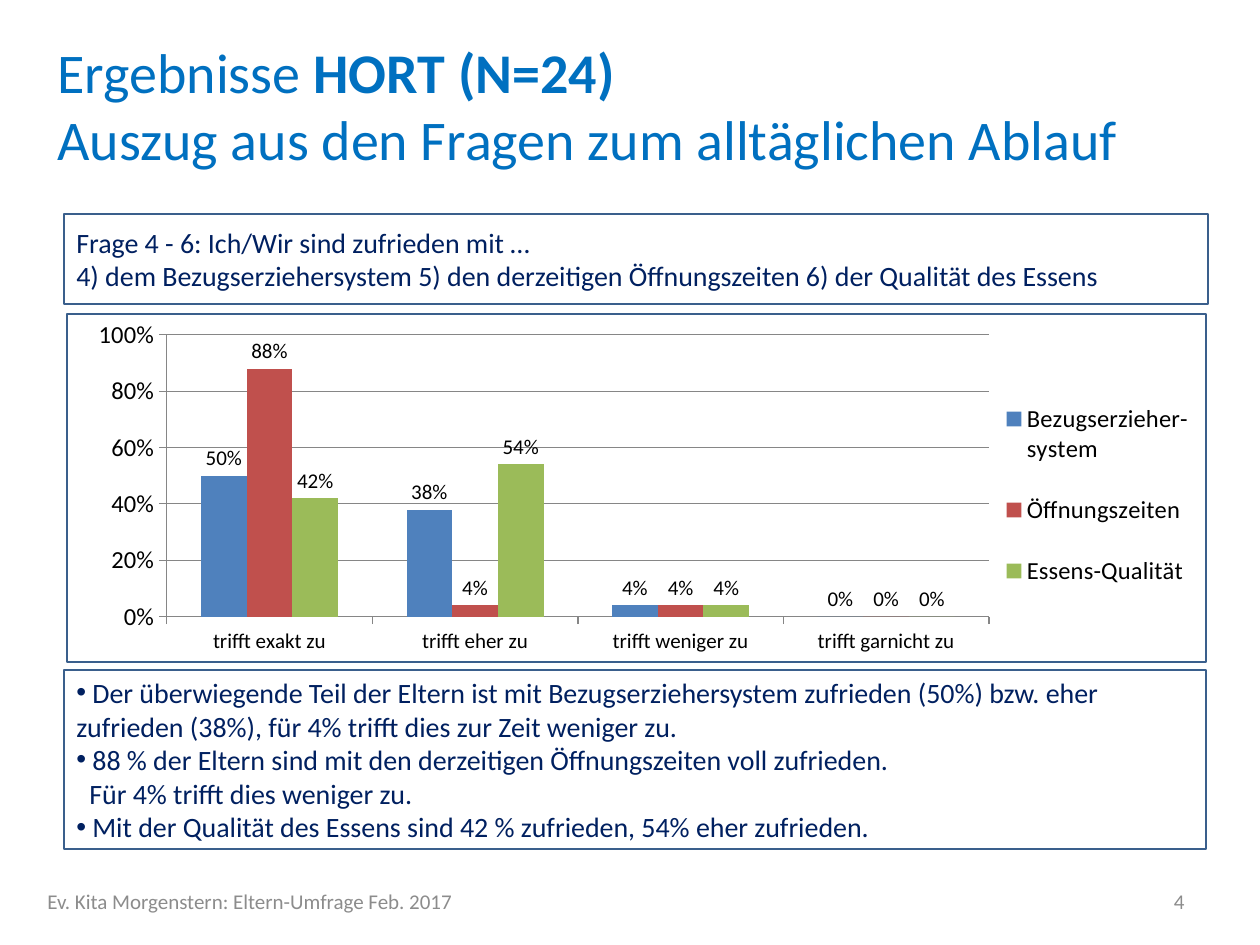
from typing import NamedTuple

from lxml.etree import SubElement
from pptx import Presentation
from pptx.chart.data import CategoryChartData
from pptx.dml.color import RGBColor
from pptx.enum.chart import XL_CHART_TYPE as ChartType
from pptx.enum.chart import XL_LABEL_POSITION as LabelPosition
from pptx.enum.chart import XL_LEGEND_POSITION as LegendPosition
from pptx.enum.chart import XL_TICK_MARK as TickMark
from pptx.enum.shapes import MSO_SHAPE as Shape
from pptx.enum.text import MSO_ANCHOR as Anchor
from pptx.enum.text import PP_ALIGN as Align
from pptx.oxml import parse_xml
from pptx.oxml.ns import nsdecls, qn
from pptx.util import Emu, Pt

SCALE = 914400 / 126  # EMU per px
FONT = "Calibri"
COLORS = {
    "title": "0070C0",
    "body": "002060",
    "footer": "8C8C8C",
    "frame": "3A5F8C",
    "axis": "868686",
    "black": "000000",
}


class Box(NamedTuple):
    left: int
    top: int
    width: int
    height: int


class Line(NamedTuple):
    """One paragraph: (text, bold) runs, with an optional bullet and indent."""
    runs: list[tuple[str, bool]]
    bullet: bool = False
    indent: int = 0


class Answer(NamedTuple):
    name: str
    shares: list[float]
    color: str


def px(length: int) -> Emu:
    return Emu(round(length * SCALE))


def rgb(name: str) -> RGBColor:
    return RGBColor.from_string(COLORS[name])


def plain(text: str, **options) -> Line:
    return Line([(text, False)], **options)


def write(shape, lines: list[Line], *, size: int, color: str, align=Align.LEFT) -> None:
    frame = shape.text_frame
    frame.word_wrap = True
    frame.vertical_anchor = Anchor.MIDDLE
    for number, line in enumerate(lines):
        paragraph = frame.add_paragraph() if number else frame.paragraphs[0]
        paragraph.alignment = align
        properties = paragraph._p.get_or_add_pPr()
        if line.indent:
            properties.set("marL", str(px(line.indent)))
        if line.bullet:
            SubElement(properties, qn("a:buFont")).set("typeface", "Arial")
            SubElement(properties, qn("a:buChar")).set("char", "•")
        for part, bold in line.runs:
            for row, text in enumerate(part.split("\n")):
                if row:
                    paragraph.add_line_break()
                run = paragraph.add_run()
                run.text = text
                run.font.name = FONT
                run.font.size = Pt(size)
                run.font.bold = bold
                run.font.color.rgb = rgb(color)


def add_text(slide, box: Box, lines: list[Line], **text_format) -> None:
    write(slide.shapes.add_textbox(*map(px, box)), lines, **text_format)


def add_frame(slide, box: Box):
    frame = slide.shapes.add_shape(Shape.RECTANGLE, *map(px, box))
    frame.shadow.inherit = False
    frame.fill.background()
    frame.line.color.rgb = rgb("frame")
    frame.line.width = Pt(1)
    return frame


def style_font(font, size: int) -> None:
    font.name = FONT
    font.size = Pt(size)
    font.color.rgb = rgb("black")


def set_layout(element, index: int, inner: bool, **fractions: float) -> None:
    """Fix the place of a chart part, in fractions of the chart."""
    for old in element.findall(qn("c:layout")):
        element.remove(old)
    target = '<c:layoutTarget val="inner"/>' if inner else ""
    modes = '<c:xMode val="edge"/><c:yMode val="edge"/>'
    sizes = "".join(f'<c:{key} val="{value}"/>' for key, value in fractions.items())
    element.insert(index, parse_xml(
        f'<c:layout {nsdecls("c")}><c:manualLayout>{target}{modes}{sizes}'
        "</c:manualLayout></c:layout>"))


def add_answer_chart(slide, box: Box, categories: list[str], answers: list[Answer]) -> None:
    data = CategoryChartData(number_format="0%")
    data.categories = categories
    for answer in answers:
        data.add_series(answer.name, answer.shares)
    chart = slide.shapes.add_chart(ChartType.COLUMN_CLUSTERED, *map(px, box), data).chart
    chart.has_title = False
    style_font(chart.font, 18)

    # Axes
    scale = chart.value_axis
    scale.minimum_scale, scale.maximum_scale, scale.major_unit = 0, 1, 0.2
    scale.tick_labels.number_format = "0%"
    scale.tick_labels.number_format_is_linked = False
    scale.has_major_gridlines = True
    scale.major_gridlines.format.line.color.rgb = rgb("axis")
    for axis, size in ((chart.category_axis, 12), (scale, 14)):
        axis.major_tick_mark = TickMark.OUTSIDE
        axis.format.line.color.rgb = rgb("axis")
        style_font(axis.tick_labels.font, size)

    # Columns and their labels
    plot = chart.plots[0]
    plot.gap_width, plot.overlap = 150, 0
    plot.vary_by_categories = False
    for series, answer in zip(plot.series, answers):
        series.format.fill.solid()
        series.format.fill.fore_color.rgb = RGBColor.from_string(answer.color)
        labels = series.data_labels
        labels.show_value = True
        labels.number_format = "0%"
        labels.number_format_is_linked = False
        labels.position = LabelPosition.OUTSIDE_END
        style_font(labels.font, 12)

    # Legend
    chart.has_legend = True
    legend = chart.legend
    legend.position = LegendPosition.RIGHT
    legend.include_in_layout = False
    style_font(legend.font, 14)
    set_layout(legend._element, 1, False, x=0.82, y=0.17, w=0.17, h=0.7)
    plot_area = chart._chartSpace.chart.plotArea
    set_layout(plot_area, 0, True, x=0.09, y=0.06, w=0.72, h=0.81)


def main() -> None:
    deck = Presentation()
    deck.slide_width, deck.slide_height = px(1260), px(945)
    slide = deck.slides.add_slide(deck.slide_layouts[6])

    # Footer and title
    add_text(slide, Box(35, 876, 795, 50),
             [plain("Ev. Kita Morgenstern: Eltern-Umfrage Feb. 2017")], size=12, color="footer")
    add_text(slide, Box(903, 876, 294, 50), [plain("4")],
             size=12, color="footer", align=Align.RIGHT)
    add_text(slide, Box(45, 35, 1171, 140), [
        Line([("Ergebnisse ", False), ("HORT (N=24)", True)]),
        plain("Auszug aus den Fragen zum alltäglichen Ablauf"),
    ], size=32, color="title")

    # Findings and question
    write(add_frame(slide, Box(64, 670, 1142, 179)), [
        plain(" Der überwiegende Teil der Eltern ist mit Bezugserziehersystem zufrieden (50%) "
              "bzw. eher zufrieden (38%), für 4% trifft dies zur Zeit weniger zu.", bullet=True),
        plain(" 88 % der Eltern sind mit den derzeitigen Öffnungszeiten voll zufrieden.",
              bullet=True),
        plain("Für 4% trifft dies weniger zu.", indent=13),
        plain(" Mit der Qualität des Essens sind 42 % zufrieden, 54% eher zufrieden.",
              bullet=True),
    ], size=16, color="body")
    write(add_frame(slide, Box(64, 214, 1144, 90)), [
        plain("Frage 4 - 6: Ich/Wir sind zufrieden mit … \n4) dem Bezugserziehersystem "
              "5) den derzeitigen Öffnungszeiten 6) der Qualität des Essens"),
    ], size=16, color="body")

    # Chart in its frame
    add_frame(slide, Box(67, 314, 1139, 348))
    add_answer_chart(
        slide, Box(64, 314, 1142, 348),
        ["trifft exakt zu", "trifft eher zu", "trifft weniger zu", "trifft garnicht zu"],
        [Answer("Bezugserzieher-system", [0.5, 0.38, 0.04, 0], "4F81BD"),
         Answer("Öffnungszeiten", [0.88, 0.04, 0.04, 0], "C0504D"),
         Answer("Essens-Qualität", [0.42, 0.54, 0.04, 0], "9BBB59")])

    deck.save("out.pptx")


if __name__ == "__main__":
    main()
